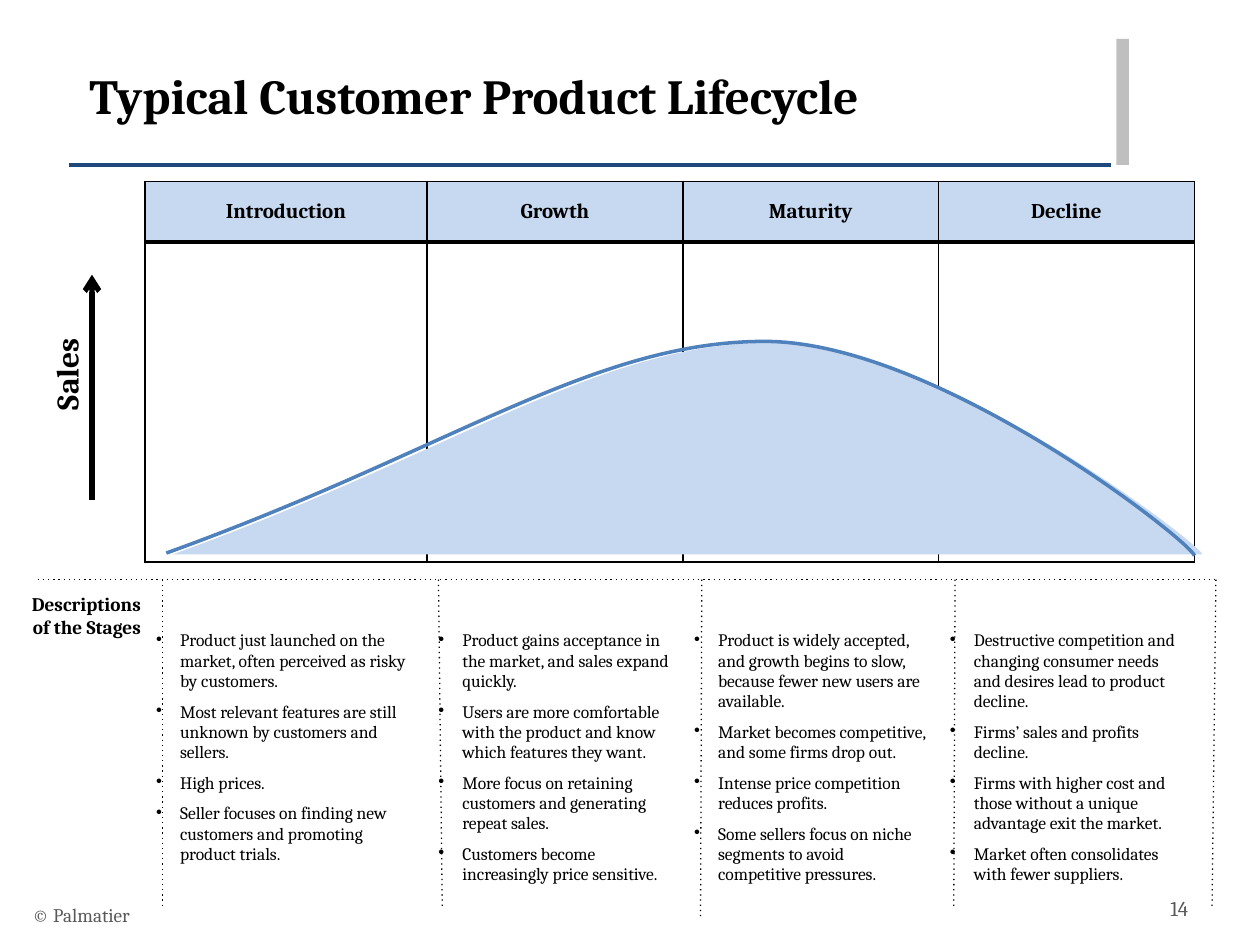
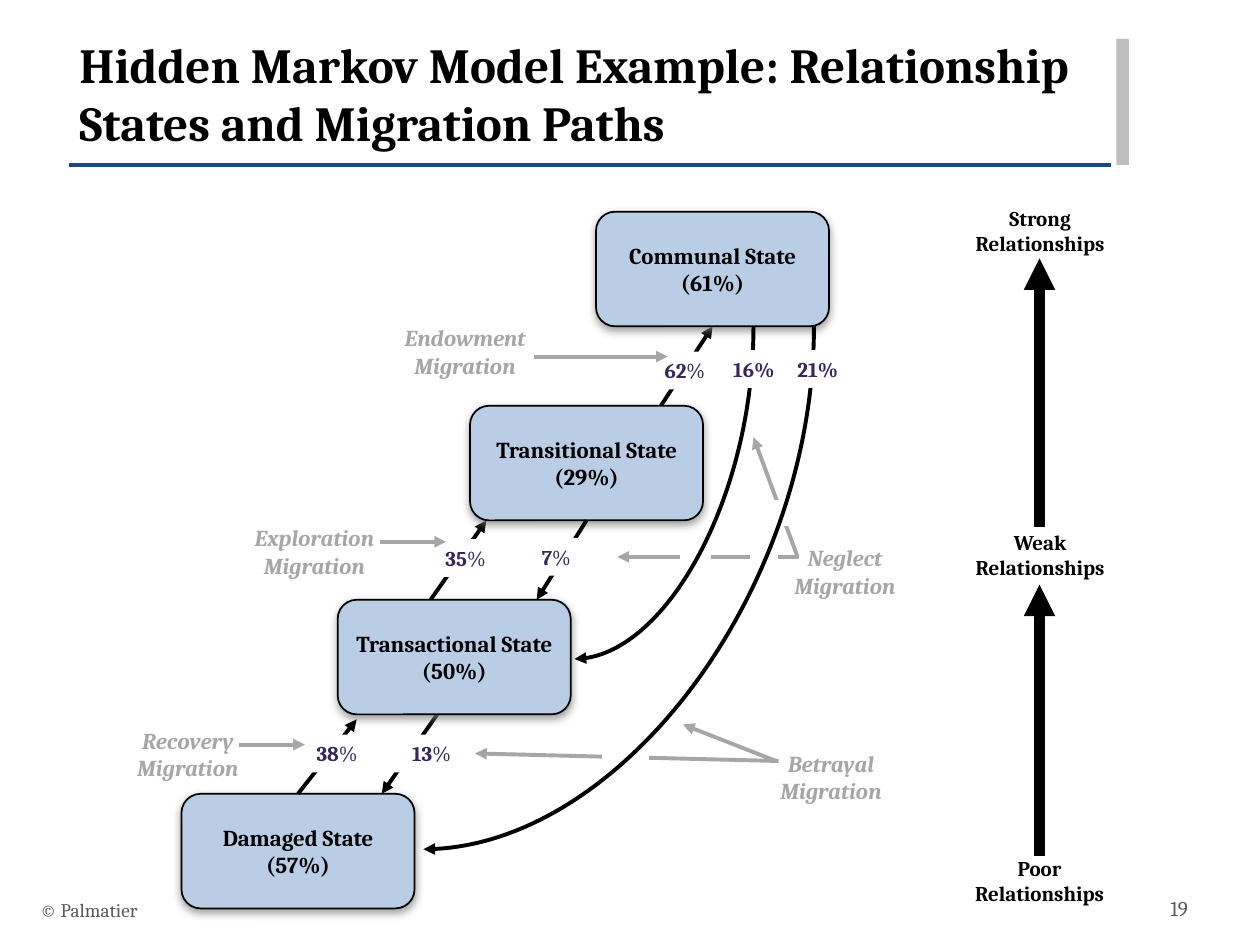
"""Build two slides on product lifecycles and relationship migration."""
from dataclasses import dataclass
from typing import Optional

from lxml import etree
from pptx import Presentation
from pptx import util as u
from pptx.dml.color import RGBColor
from pptx.enum import shapes, text
from pptx.oxml.ns import qn
from pptx.shapes.autoshape import Shape
from pptx.shapes.connector import Connector
from pptx.slide import Slide

Point = tuple[float, float]
COLOURS = {
    "black": "000000", "white": "FFFFFF", "rule": "1F497D", "bar": "BFBFBF",
    "footer": "595959", "pale": "C6D9F1", "curve": "4F81BD", "state": "B9CDE5",
    "grey": "A6A6A6", "percent": "39275B", "shadow": "808080",
}
FONT = "Cambria"
STYLES = {
    "title": ("black", dict(size=u.Pt(28), bold=True)),
    "footer": ("footer", dict(size=u.Pt(11))),
    "number": ("footer", dict(size=u.Pt(12))),
    "head": ("black", dict(size=u.Pt(12), bold=True)),
    "bullet": ("black", dict(size=u.Pt(10), bold=False)),
    "axis": ("black", dict(size=u.Pt(18), bold=True)),
    "caption": ("black", dict(size=u.Pt(11), bold=True)),
    "state": ("black", dict(size=u.Pt(13), bold=True)),
    "migration": ("grey", dict(size=u.Pt(13), bold=True, italic=True)),
    "percent": ("percent", dict(size=u.Pt(12), bold=True)),
    "sign": ("percent", dict(size=u.Pt(12), bold=False)),
}
LEFT, CENTER, RIGHT = text.PP_ALIGN.LEFT, text.PP_ALIGN.CENTER, text.PP_ALIGN.RIGHT
TOP, MIDDLE = text.MSO_ANCHOR.TOP, text.MSO_ANCHOR.MIDDLE
RECT = shapes.MSO_SHAPE.RECTANGLE

STAGES = {
    "Introduction": [
        "Product just launched on the market, often perceived as risky by customers.",
        "Most relevant features are still unknown by customers and sellers.",
        "High prices.",
        "Seller focuses on finding new customers and promoting product trials."],
    "Growth": [
        "Product gains acceptance in the market, and sales expand quickly.",
        "Users are more comfortable with the product and know which features they want.",
        "More focus on retaining customers and generating repeat sales.",
        "Customers become increasingly price sensitive."],
    "Maturity": [
        "Product is widely accepted, and growth begins to slow, because fewer new users are available.",
        "Market becomes competitive, and some firms drop out.",
        "Intense price competition reduces profits.",
        "Some sellers focus on niche segments to avoid competitive pressures."],
    "Decline": [
        "Destructive competition and changing consumer needs and desires lead to product decline.",
        "Firms’ sales and profits decline.",
        "Firms with higher cost and those without a unique advantage exit the market.",
        "Market often consolidates with fewer suppliers."],
}


@dataclass
class Box:
    """A rectangle in inches."""
    left: float
    top: float
    width: float
    height: float

    def emu(self) -> list[u.Length]:
        """Return the four lengths as Inches."""
        return [u.Inches(v) for v in (self.left, self.top, self.width, self.height)]


@dataclass
class Line:
    """A straight line or arrow."""
    start: Point
    end: Point
    colour: str = "black"
    width: float = 2.25
    head: Optional[str] = "triangle"
    dash: Optional[str] = None


@dataclass
class Percent:
    """A migration probability on a white label."""
    number: str
    left: float
    top: float


def rgb(name: str) -> RGBColor:
    """Look up a colour by name."""
    return RGBColor.from_string(COLOURS[name])


def add_run(p, words: str, style: str) -> None:
    """Append styled words to a paragraph."""
    r = p.add_run()
    r.text = words
    colour, values = STYLES[style]
    r.font.name = FONT
    r.font.color.rgb = rgb(colour)
    for key, value in values.items():
        setattr(r.font, key, value)


def write(tf, lines: list[str], style: str, align=LEFT, anchor=TOP) -> None:
    """Fill a text frame with one paragraph per line."""
    settings = dict(word_wrap=True, auto_size=text.MSO_AUTO_SIZE.NONE, vertical_anchor=anchor)
    for key, value in settings.items():
        setattr(tf, key, value)
    for i, words in enumerate(lines):
        p = tf.add_paragraph() if i else tf.paragraphs[0]
        p.alignment = align
        add_run(p, words, style)


def add_label(s: Slide, box: Box, lines: list[str], style: str, align=CENTER, anchor=TOP) -> Shape:
    """Add a text box."""
    sp = s.shapes.add_textbox(*box.emu())
    write(sp.text_frame, lines, style, align, anchor)
    return sp


def paint(sp: Shape, fill: Optional[str], line: Optional[str] = None, width: float = 1) -> None:
    """Set fill and outline and drop the theme shadow."""
    sp.shadow.inherit = False
    for part, colour in ((sp.fill, fill), (sp.line.fill, line)):
        if colour:
            part.solid()
            part.fore_color.rgb = rgb(colour)
        else:
            part.background()
    if line:
        sp.line.width = u.Pt(width)


def add_block(s: Slide, box: Box, fill: Optional[str], line: Optional[str] = None,
              width: float = 1, preset=RECT) -> Shape:
    """Add a painted preset shape."""
    sp = s.shapes.add_shape(preset, *box.emu())
    paint(sp, fill, line, width)
    return sp


def add_line(s: Slide, line: Line, kind=shapes.MSO_CONNECTOR.STRAIGHT) -> Connector:
    """Add a connector with an optional arrowhead and dash."""
    sp = s.shapes.add_connector(kind, *[u.Inches(v) for v in line.start + line.end])
    sp.line.color.rgb = rgb(line.colour)
    sp.line.width = u.Pt(line.width)
    spPr = sp._element.spPr
    ln = spPr.find(qn("a:ln"))
    if line.dash:
        etree.SubElement(ln, qn("a:prstDash"), val=line.dash)
    if line.head:
        etree.SubElement(ln, qn("a:tailEnd"), type=line.head)
    etree.SubElement(spPr, qn("a:effectLst"))
    return sp


def add_sweep(s: Slide, start: Point, end: Point) -> None:
    """Add a quarter-curve arrow that leaves downwards and arrives leftwards."""
    run, drop = start[0] - end[0], end[1] - start[1]
    x, y = (start[0] + end[0]) / 2, (start[1] + end[1]) / 2
    flat = Line((x - drop / 2, y - run / 2), (x + drop / 2, y + run / 2))
    spPr = add_line(s, flat, shapes.MSO_CONNECTOR.CURVE)._element.spPr
    spPr.find(qn("a:xfrm")).set("rot", str(90 * 60000))
    spPr.find(qn("a:prstGeom")).set("prst", "curvedConnector2")


def add_curve(s: Slide, points: list[Point], close: bool) -> Shape:
    """Add a freeform of cubic curves: a start, then two controls and an end for each."""
    pts = [(u.Inches(x), u.Inches(y)) for x, y in points]
    fb = s.shapes.build_freeform(*pts[0])
    fb.add_line_segments(pts[1:], close=close)
    sp = fb.convert_to_shape()
    steps = list(sp._element.spPr.iter(qn("a:lnTo")))
    for i in range(0, len(steps), 3):
        cubic = etree.Element(qn("a:cubicBezTo"))
        steps[i].addprevious(cubic)
        for step in steps[i:i + 3]:
            cubic.append(step[0])
            step.getparent().remove(step)
    return sp


def start_slide(prs, title: str, title_at: Point, footer_at: Point, number: int) -> Slide:
    """Add a slide with the shared title, rule, bar and footer."""
    s = prs.slides.add_slide(prs.slide_layouts[5])
    add_line(s, Line((0.55, 1.31), (8.82, 1.31), "rule", 2, None))
    add_block(s, Box(8.86, 0.31, 0.1, 1), "bar")
    sp = s.shapes.title
    sp.left, sp.top, sp.width, sp.height = Box(*title_at, 8.18, 0.88).emu()
    write(sp.text_frame, [title], "title")
    add_label(s, Box(*footer_at, 6.7, 0.4), ["© Palmatier"], "footer", LEFT, MIDDLE)
    add_label(s, Box(9.19, 7.06, 0.61, 0.4), [str(number)], "number", LEFT)
    return s


def set_borders(cell, widths: dict[str, float]) -> None:
    """Draw black borders on the given sides and none on the others."""
    tcPr = cell._tc.get_or_add_tcPr()
    for i, side in enumerate("LRTB"):
        ln = etree.Element(qn(f"a:ln{side}"))
        tcPr.insert(i, ln)
        if side in widths:
            ln.set("w", str(u.Pt(widths[side])))
            fill = etree.SubElement(ln, qn("a:solidFill"))
            etree.SubElement(fill, qn("a:srgbClr"), val=COLOURS["black"])
        else:
            etree.SubElement(ln, qn("a:noFill"))


def add_bullets(tf, lines: list[str]) -> None:
    """Turn a text frame into a bulleted list."""
    write(tf, lines, "bullet")
    for i, p in enumerate(tf.paragraphs):
        pPr = p._p.get_or_add_pPr()
        pPr.set("marL", str(u.Inches(0.19)))
        pPr.set("indent", str(-u.Inches(0.19)))
        etree.SubElement(pPr, qn("a:buChar"), char="•")
        if i:
            p.space_before = u.Pt(6)


def add_stage_table(s: Slide) -> None:
    """Add the table of lifecycle stages."""
    table = s.shapes.add_table(4, len(STAGES), *Box(1.15, 1.44, 8.33, 6.1).emu()).table
    table.first_row = table.horz_banding = False
    for row, height in zip(table.rows, (0.48, 2.54, 0.37, 2.72)):
        row.height = u.Inches(height)
    borders = (dict(L=1, R=1, T=1, B=3), dict(L=1, R=1, T=3, B=1), dict(T=1), {})
    for j, (stage, notes) in enumerate(STAGES.items()):
        table.columns[j].width = u.Inches(2.03 if j else 2.24)
        cells = [table.cell(i, j) for i in range(4)]
        for cell, widths in zip(cells, borders):
            cell.margin_left = cell.margin_right = u.Inches(0.09)
            cell.margin_top = cell.margin_bottom = 0
            cell.fill.background()
            set_borders(cell, widths)
        head, notes_cell = cells[0], cells[3]
        head.fill.solid()
        head.fill.fore_color.rgb = rgb("pale")
        write(head.text_frame, [stage], "head", CENTER)
        head.vertical_anchor = MIDDLE
        notes_cell.margin_top = u.Inches(0.18)
        add_bullets(notes_cell.text_frame, notes)


def build_lifecycle(prs) -> None:
    """Build the product lifecycle slide."""
    s = start_slide(prs, "Typical Customer Product Lifecycle", (0.61, 0.47), (0.16, 7.06), 14)
    add_stage_table(s)
    add_label(s, Box(-0.02, 2.77, 1.09, 0.4), ["Sales"], "axis").rotation = 270
    area = [(1.37, 4.4), (3.62, 3.59), (4.75, 2.72), (6.12, 2.72),
            (7.48, 2.72), (9.59, 4.37), (9.54, 4.4)]
    paint(add_curve(s, area, True), "pale")
    edge = [(1.32, 4.39), (3.57, 3.58), (4.7, 2.71), (6.07, 2.71),
            (7.43, 2.71), (9.44, 4.29), (9.48, 4.41)]
    paint(add_curve(s, edge, False), None, "curve", 2)
    add_line(s, Line((0.73, 3.97), (0.73, 2.18), width=3, head="arrow"))
    caption = add_label(s, Box(0, 4.65, 1.21, 0.46), ["Descriptions of the Stages"], "caption", RIGHT)
    caption.text_frame.margin_right = u.Inches(0.09)
    ends = [((0.3, 4.6), (9.65, 4.6)), ((1.29, 4.6), (1.29, 7.19)), ((3.48, 4.6), (3.51, 7.19)),
            ((5.57, 4.6), (5.56, 7.28)), ((7.58, 4.6), (7.57, 7.19)), ((9.65, 4.6), (9.62, 7.19))]
    for start, end in ends:
        add_line(s, Line(start, end, width=0.75, head=None, dash="dot"))


def add_state(s: Slide, words: str, left: float, top: float) -> Shape:
    """Add a rounded relationship state with a soft shadow."""
    sp = add_block(s, Box(left, top, 1.85, 0.91), "state", "black",
                   preset=shapes.MSO_SHAPE.FLOWCHART_ALTERNATE_PROCESS)
    shadow = etree.SubElement(sp._element.spPr.find(qn("a:effectLst")), qn("a:outerShdw"),
                              blurRad=str(u.Pt(5)), dist=str(u.Pt(2)), dir=str(90 * 60000))
    colour = etree.SubElement(shadow, qn("a:srgbClr"), val=COLOURS["shadow"])
    etree.SubElement(colour, qn("a:alpha"), val="75000")
    write(sp.text_frame, [words], "state", CENTER, MIDDLE)
    return sp


def add_percent(s: Slide, percent: Percent) -> None:
    """Add a percentage that interrupts an arrow."""
    sp = add_block(s, Box(percent.left, percent.top, 0.69, 0.3), "white")
    write(sp.text_frame, [percent.number], "percent", CENTER)
    add_run(sp.text_frame.paragraphs[0], "%", "sign")


def add_neglect_percents(s: Slide) -> None:
    """Add the two tabbed percentages that interrupt the sweeping arrows."""
    tf = add_block(s, Box(5.66, 2.78, 1.34, 0.3), "white").text_frame
    tf.margin_left = u.Inches(0.16)
    tabs = etree.SubElement(tf.paragraphs[0]._p.get_or_add_pPr(), qn("a:tabLst"))
    etree.SubElement(tabs, qn("a:tab"), pos=str(u.Inches(0.51)), algn="l")
    write(tf, ["16%\t21%"], "percent")


def build_migration(prs) -> None:
    """Build the relationship migration slide."""
    s = start_slide(prs, "Hidden Markov Model Example: Relationship States and Migration Paths",
                    (0.53, 0.22), (0.22, 7.02), 19)
    pointers = [
        (Line((6.34, 4.42), (4.9, 4.42), "grey"), [Box(5.97, 4.35, 0.19, 0.2)]),
        (Line((6.33, 4.42), (5.98, 3.47), "grey"),
         [Box(6.1, 3.98, 0.24, 0.18), Box(5.41, 4.33, 0.22, 0.2)]),
        (Line((6.18, 6.04), (3.77, 5.98), "grey"), [Box(4.79, 5.87, 0.35, 0.37)]),
        (Line((6.16, 6.04), (5.42, 5.75), "grey"), [])]
    for pointer, gaps in pointers:
        add_line(s, pointer)
        for gap in gaps:
            add_block(s, gap, "white", "white", 2)
    upward = add_line(s, Line((4.65, 4.13), (5.66, 2.59)))
    add_line(s, Line((2.8, 5.64), (3.86, 4.13)))
    add_line(s, Line((3.84, 5.14), (3.03, 6.3)))
    damaged = add_state(s, "Damaged State (57%)", 1.44, 6.3)
    add_state(s, "Transactional State (50%)", 2.68, 4.76)
    transitional = add_state(s, "Transitional State (29%)", 3.73, 3.22)
    communal = add_state(s, "Communal State (61%)", 4.73, 1.68)
    upward.begin_connect(transitional, 2)
    upward.end_connect(communal, 2)
    add_line(s, Line((2.36, 6.3), (2.83, 5.71))).begin_connect(damaged, 0)
    add_line(s, Line((4.65, 4.13), (4.26, 4.76))).begin_connect(transitional, 2)
    add_sweep(s, (6.46, 2.59), (3.36, 6.74))
    add_sweep(s, (5.98, 2.59), (4.56, 5.23))
    add_neglect_percents(s)
    for percent in (Percent("62", 5.09, 2.79), Percent("35", 3.35, 4.28), Percent("7", 4.07, 4.27),
                    Percent("38", 2.33, 5.83), Percent("13", 3.08, 5.83)):
        add_percent(s, percent)
    endowment = add_block(s, Box(2.83, 2.65, 1.72, 0.28), None,
                          preset=shapes.MSO_SHAPE.ROUNDED_RECTANGLE)
    write(endowment.text_frame, ["Endowment", "Migration"], "migration", CENTER, MIDDLE)
    for name, left, top, width in (("Exploration", 1.43, 4.11, 2.13), ("Recovery", 0.53, 5.72, 1.92),
                                   ("Neglect", 5.64, 4.27, 2.13), ("Betrayal", 5.53, 5.9, 2.13)):
        add_label(s, Box(left, top, width, 0.4), [name, "Migration"], "migration")
    weak = add_block(s, Box(7.48, 4.15, 1.55, 0.5), "white")
    write(weak.text_frame, ["Weak Relationships"], "head", CENTER)
    add_label(s, Box(7.6, 1.58, 1.31, 0.5), ["Strong Relationships"], "head")
    add_label(s, Box(7.54, 6.74, 1.42, 0.47), ["Poor Relationships"], "head")
    for start, end in (((8.25, 4.18), (8.25, 2.05)), ((8.25, 6.79), (8.25, 4.64))):
        add_line(s, Line(start, end, width=6))
    for start, end in (((1.9, 5.91), (2.42, 5.91)), ((3.02, 4.3), (3.54, 4.3)),
                       ((4.24, 2.83), (5.3, 2.83))):
        add_line(s, Line(start, end, "grey"))


def main() -> None:
    """Build and save the presentation."""
    prs = Presentation()
    prs.slide_width, prs.slide_height = u.Inches(10), u.Inches(7.5)
    build_lifecycle(prs)
    build_migration(prs)
    prs.save("out.pptx")


if __name__ == "__main__":
    main()
